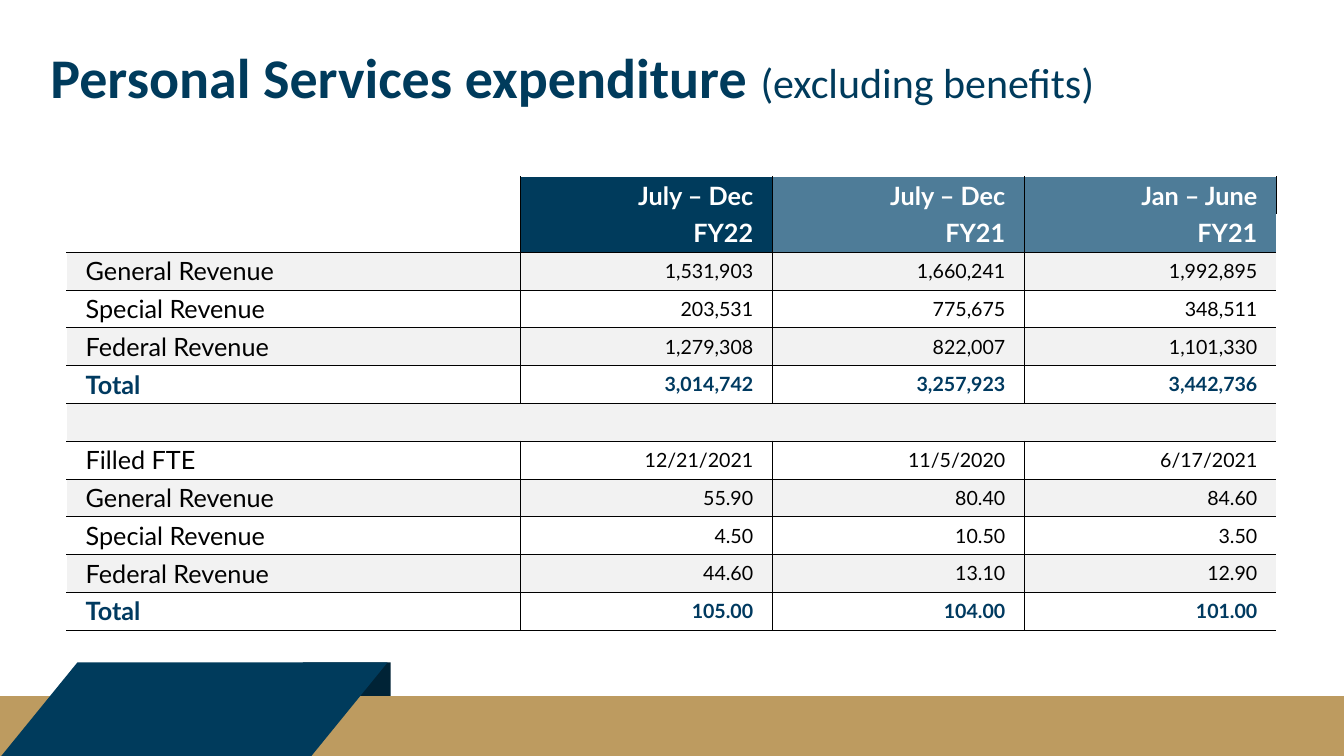
from dataclasses import dataclass
from typing import Optional

import pptx
import pptx.dml.color
import pptx.enum.shapes
import pptx.enum.text
import pptx.oxml
import pptx.oxml.ns
import pptx.util
from pptx.util import Inches

SHAPES = pptx.enum.shapes.MSO_SHAPE
ALIGN = pptx.enum.text.PP_ALIGN
ANCHOR = pptx.enum.text.MSO_ANCHOR

NAVY, DEEP_NAVY, TOTAL_NAVY = "003B5C", "002336", "003A60"
STEEL, GOLD = "4E7C98", "BD9B60"
BLACK, WHITE, BAND = "000000", "FFFFFF", "F2F2F2"
HEADER_ROWS = 2
HEADER_FILLS = (WHITE, NAVY, STEEL, STEEL)
COLUMN_WIDTHS = (9, 5, 5, 5)
ROW_HEIGHT = 0.75


@dataclass(frozen=True)
class FooterPiece:
    preset: int
    left: float
    top: float
    width: float
    height: float
    fill: str


FOOTER = (
    FooterPiece(SHAPES.RECTANGLE, 6.01, 13.14, 1.74, 1.89, DEEP_NAVY),
    FooterPiece(SHAPES.RECTANGLE, 0, 13.81, 26.66, 1.19, GOLD),
    FooterPiece(SHAPES.FLOWCHART_DATA, 0, 13.14, 7.69, 1.89, NAVY),
)

EXPENDITURE = (
    ("", "July – Dec", "July – Dec", "Jan – June"),
    ("", "FY22", "FY21", "FY21"),
    ("General Revenue", "1,531,903", "1,660,241", "1,992,895"),
    ("Special Revenue", "203,531", "775,675", "348,511"),
    ("Federal Revenue", "1,279,308", "822,007", "1,101,330"),
    ("Total", "3,014,742", "3,257,923", "3,442,736"),
    ("", "", "", ""),
    ("Filled FTE", "12/21/2021", "11/5/2020", "6/17/2021"),
    ("General Revenue", "55.90", "80.40", "84.60"),
    ("Special Revenue", "4.50", "10.50", "3.50"),
    ("Federal Revenue", "44.60", "13.10", "12.90"),
    ("Total", "105.00", "104.00", "101.00"),
)


def rgb(value: str) -> pptx.dml.color.RGBColor:
    return pptx.dml.color.RGBColor.from_string(value)


def add_text(paragraph, text: str, *, size: float, color: str,
             font: str = "Lato", bold: bool = False) -> None:
    run = paragraph.add_run()
    run.text = text
    run.font.name = font
    run.font.size = pptx.util.Pt(size)
    run.font.bold = bold
    run.font.color.rgb = rgb(color)


def draw_footer_piece(slide, piece: FooterPiece) -> None:
    shape = slide.shapes.add_shape(
        piece.preset, Inches(piece.left), Inches(piece.top),
        Inches(piece.width), Inches(piece.height))
    shape.shadow.inherit = False
    shape.fill.solid()
    shape.fill.fore_color.rgb = rgb(piece.fill)
    shape.line.fill.background()


def draw_title(slide) -> None:
    title = slide.shapes.add_textbox(Inches(1), Inches(1), Inches(24.81), Inches(1.5))
    frame = title.text_frame
    frame.word_wrap = True
    frame.margin_left = frame.margin_right = 0
    frame.margin_top = frame.margin_bottom = 0
    heading = frame.paragraphs[0]
    heading.line_spacing = 0.9
    add_text(heading, "Personal Services expenditure ", size=80, color=NAVY,
             font="Calibri", bold=True)
    add_text(heading, "(excluding benefits)", size=60, color=NAVY, font="Calibri")


def border_colors(row: int, column: int) -> dict[str, Optional[str]]:
    """Colour of each side of a cell; None leaves the side open."""
    divider = BLACK if any(EXPENDITURE[row]) else None
    last = column == len(COLUMN_WIDTHS) - 1
    return {
        "lnL": WHITE if column == 0 else divider,
        "lnR": divider if not last or row == 0 else None,
        "lnT": WHITE if row == 0 else None if row < HEADER_ROWS else BLACK,
        "lnB": None if row == 0 else BLACK,
    }


def set_borders(cell, colors: dict[str, Optional[str]]) -> None:
    properties = cell._tc.get_or_add_tcPr()
    namespace = pptx.oxml.ns.nsdecls("a")
    for position, (side, color) in enumerate(colors.items()):
        paint = (f'<a:solidFill><a:srgbClr val="{color}"/></a:solidFill>'
                 if color else "<a:noFill/>")
        properties.insert(position, pptx.oxml.parse_xml(
            f'<a:{side} {namespace} w="12700">{paint}</a:{side}>'))


def format_cell(cell, row: int, column: int) -> None:
    header = row < HEADER_ROWS
    total = EXPENDITURE[row][0] == "Total"
    cell.fill.solid()
    cell.fill.fore_color.rgb = rgb(
        HEADER_FILLS[column] if header else BAND if row % 2 == 0 else WHITE)
    set_borders(cell, border_colors(row, column))
    cell.vertical_anchor = ANCHOR.MIDDLE
    cell.margin_left = cell.margin_right = Inches(0.38)
    cell.margin_top = cell.margin_bottom = 0

    text = EXPENDITURE[row][column]
    if text:
        paragraph = cell.text_frame.paragraphs[0]
        paragraph.alignment = ALIGN.LEFT if column == 0 else ALIGN.RIGHT
        add_text(paragraph, text, size=36 if header or column == 0 else 28,
                 color=WHITE if header else TOTAL_NAVY if total else BLACK,
                 bold=header or total)


def draw_expenditure(slide) -> None:
    table = slide.shapes.add_table(
        len(EXPENDITURE), len(COLUMN_WIDTHS), Inches(1.32), Inches(3.5),
        Inches(sum(COLUMN_WIDTHS)), Inches(ROW_HEIGHT * len(EXPENDITURE))).table
    table.first_row = table.horz_banding = False
    for column, width in enumerate(COLUMN_WIDTHS):
        table.columns[column].width = Inches(width)
    for row in range(len(EXPENDITURE)):
        table.rows[row].height = Inches(ROW_HEIGHT)
        for column in range(len(COLUMN_WIDTHS)):
            format_cell(table.cell(row, column), row, column)


def main() -> None:
    deck = pptx.Presentation()
    deck.slide_width, deck.slide_height = Inches(26.66), Inches(15)
    slide = deck.slides.add_slide(deck.slide_layouts[6])

    # Footer band with its folded ribbon
    for piece in FOOTER:
        draw_footer_piece(slide, piece)

    # Title and expenditure table
    draw_title(slide)
    draw_expenditure(slide)
    deck.save("out.pptx")


if __name__ == "__main__":
    main()
